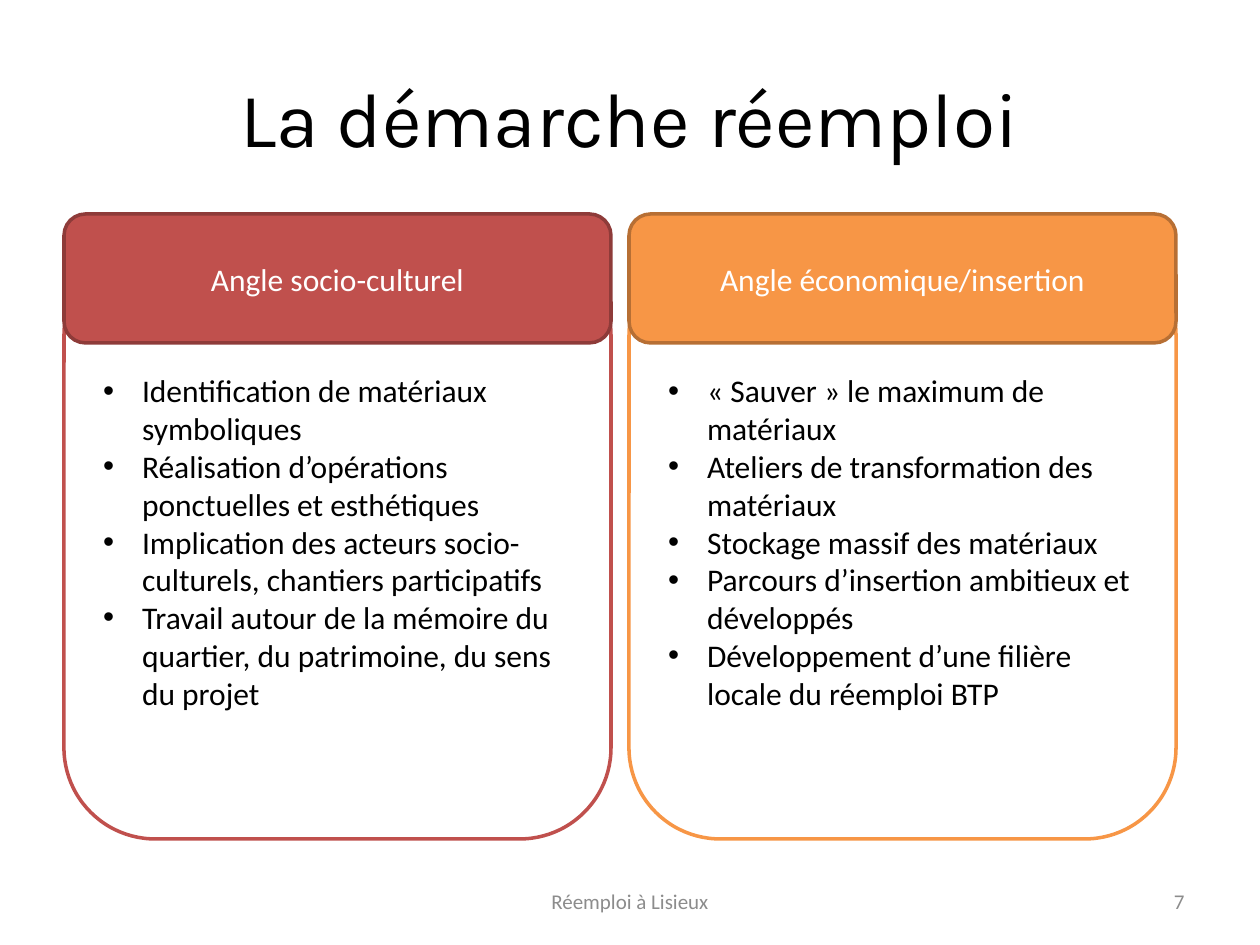
from lxml.etree import SubElement
from pptx import Presentation
from pptx.dml.color import RGBColor
from pptx.enum.shapes import MSO_SHAPE
from pptx.enum.text import MSO_ANCHOR, PP_ALIGN
from pptx.oxml.ns import qn
from pptx.util import Emu, Pt

PIXELS_PER_INCH = 126
COLORS = {
    "black": "000000",
    "white": "FFFFFF",
    "grey": "8C8C8C",
    "red": "C0504D",
    "dark red": "8E3B39",
    "orange": "F79646",
    "dark orange": "B76F34",
}
CARDS = [
    ("Angle socio-culturel", "red", [
        "Identification de matériaux symboliques",
        "Réalisation d’opérations ponctuelles et esthétiques",
        "Implication des acteurs socio-culturels, chantiers participatifs",
        "Travail autour de la mémoire du quartier, du patrimoine, du sens du projet",
    ]),
    ("Angle économique/insertion", "orange", [
        "« Sauver » le maximum de matériaux",
        "Ateliers de transformation des matériaux",
        "Stockage massif des matériaux",
        "Parcours d’insertion ambitieux et développés",
        "Développement d’une filière locale du réemploi BTP",
    ]),
]


def px(length):
    """Turn a length in pixels into EMU."""
    return Emu(round(length * 914400 / PIXELS_PER_INCH))


def color(name):
    """Look up a named colour."""
    return RGBColor.from_string(COLORS[name])


def write(shape, lines, size, color_name, align, font="Calibri"):
    """Fill a shape with vertically centred paragraphs of one style."""
    frame = shape.text_frame
    frame.text = "\n".join(lines)
    frame.word_wrap = True
    frame.vertical_anchor = MSO_ANCHOR.MIDDLE
    for para in frame.paragraphs:
        para.alignment = align
        for span in para.runs:
            span.font.name = font
            span.font.size = Pt(size)
            span.font.color.rgb = color(color_name)


def add_bullets(shape):
    """Give every paragraph of a shape a hanging bullet."""
    for para in shape.text_frame.paragraphs:
        properties = para._p.get_or_add_pPr()
        properties.set("marL", str(px(39)))
        properties.set("indent", str(-px(39)))
        SubElement(properties, qn("a:buFont"), typeface="Arial")
        SubElement(properties, qn("a:buChar"), char="•")


def add_rounded(page, box, fill, line):
    """Add a rounded rectangle with a two-point outline."""
    shape = page.shapes.add_shape(MSO_SHAPE.ROUNDED_RECTANGLE, *map(px, box))
    shape.shadow.inherit = False
    shape.fill.solid()
    shape.fill.fore_color.rgb = color(fill)
    shape.line.color.rgb = color(line)
    shape.line.width = Pt(2)
    return shape


def add_title(page, box, text):
    """Place the title placeholder in its box."""
    title = page.shapes.title
    title.left, title.top, title.width, title.height = map(px, box)
    write(title, [text], 44, "black", PP_ALIGN.CENTER, "Karla")


def add_card(page, box, heading, tone, points):
    """Draw a bulleted card with a coloured header over its top edge."""
    left, top, width, height = box
    overhang = 30
    body = add_rounded(
        page, (left, top + overhang, width, height - overhang), "white", tone)
    write(body, points, 18, "black", PP_ALIGN.LEFT)
    add_bullets(body)
    header = add_rounded(page, (left, top, width, 129), tone, f"dark {tone}")
    write(header, [heading], 18, "white", PP_ALIGN.CENTER)


def add_footer(page, box, text, number):
    """Add the centred footer text and the page number at the right."""
    left, top, width, height = box
    parts = [(text, 400, PP_ALIGN.CENTER, 0.5),
             (number, 294, PP_ALIGN.RIGHT, 1)]
    for words, span_width, align, share in parts:
        start = left + (width - span_width) * share
        label = page.shapes.add_textbox(
            px(start), px(top), px(span_width), px(height))
        write(label, [words], 12, "grey", align)


def main():
    """Build and save the slide."""
    deck = Presentation()
    deck.slide_width, deck.slide_height = px(1260), px(945)
    page = deck.slides.add_slide(deck.slide_layouts[5])
    add_title(page, (63, 38, 1134, 157), "La démarche réemploi")
    for column, (heading, tone, points) in enumerate(CARDS):
        box = (64 + column * 565, 214, 547, 625)
        add_card(page, box, heading, tone, points)
    add_footer(page, (63, 876, 1134, 50), "Réemploi à Lisieux", "7")
    deck.save("out.pptx")


if __name__ == "__main__":
    main()
